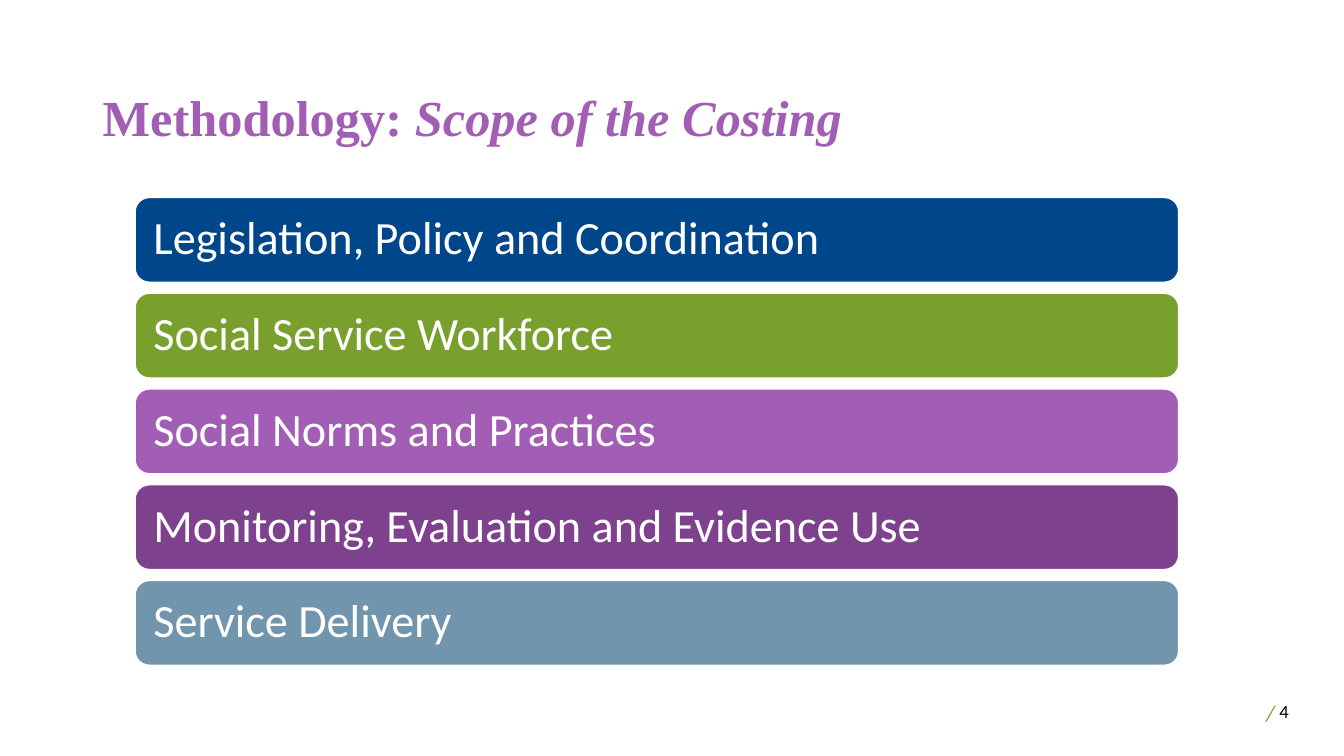
from pptx import Presentation
from pptx.dml.color import RGBColor
from pptx.enum.shapes import MSO_SHAPE
from pptx.enum.text import MSO_ANCHOR, PP_ALIGN
from pptx.util import Inches, Pt

ROUNDED = MSO_SHAPE.ROUNDED_RECTANGLE
TOP, MIDDLE, BOTTOM = MSO_ANCHOR.TOP, MSO_ANCHOR.MIDDLE, MSO_ANCHOR.BOTTOM
LEFT = PP_ALIGN.LEFT

COLORS = {
    "blue": "00468B",
    "green": "79A02C",
    "lilac": "A25EB5",
    "purple": "7D418D",
    "steel": "7095AD",
    "white": "FFFFFF",
    "black": "000000",
}
SCOPE_AREAS = [
    ("Legislation, Policy and Coordination", "blue"),
    ("Social Service Workforce", "green"),
    ("Social Norms and Practices", "lilac"),
    ("Monitoring, Evaluation and Evidence Use", "purple"),
    ("Service Delivery", "steel"),
]
BAR_TOP, BAR_HEIGHT, BAR_PITCH = 1.96, 0.84, 0.95


def rgb(name):
    return RGBColor.from_string(COLORS[name])


def write(box, text, size, color, font="Calibri", bold=False, italic=False,
          anchor=MIDDLE, spacing=1.0, wrap=True):
    """Add a run to the first paragraph of the box and return it."""
    frame = box.text_frame
    frame.word_wrap = wrap
    frame.vertical_anchor = anchor
    para = frame.paragraphs[0]
    para.alignment = LEFT
    para.line_spacing = spacing
    span = para.add_run()
    span.text = text
    span.font.name = font
    span.font.size = Pt(size)
    span.font.bold = bold
    span.font.italic = italic
    span.font.color.rgb = rgb(color)
    return span


deck = Presentation()
deck.slide_width = Inches(13.33)
deck.slide_height = Inches(7.5)
page = deck.slides.add_slide(deck.slide_layouts[6])

slash = page.shapes.add_textbox(Inches(12.46), Inches(6.89), Inches(0.39), Inches(0.37))
write(slash, "/", 16, "green", italic=True, anchor=TOP, wrap=False)

title = page.shapes.add_textbox(Inches(0.92), Inches(0.4), Inches(11.5), Inches(1.11))
for text, italic in [("Methodology: ", False), ("Scope of the Costing", True)]:
    write(title, text, 36, "lilac", font="Times New Roman", bold=True,
          italic=italic, anchor=BOTTOM, spacing=0.9)

for index, (area, color) in enumerate(SCOPE_AREAS):
    bar = page.shapes.add_shape(ROUNDED, Inches(1.34), Inches(BAR_TOP + index * BAR_PITCH),
                                Inches(10.35), Inches(BAR_HEIGHT))
    bar.shadow.inherit = False
    bar.fill.solid()
    bar.fill.fore_color.rgb = rgb(color)
    bar.line.color.rgb = rgb("white")
    bar.line.width = Pt(1)
    bar.text_frame.margin_left = bar.text_frame.margin_right = Inches(0.14)
    write(bar, area, 33, "white", spacing=0.9)

number = page.shapes.add_textbox(Inches(12.59), Inches(6.95), Inches(0.74), Inches(0.21))
write(number, "4", 13.3, "black")

deck.save("out.pptx")
